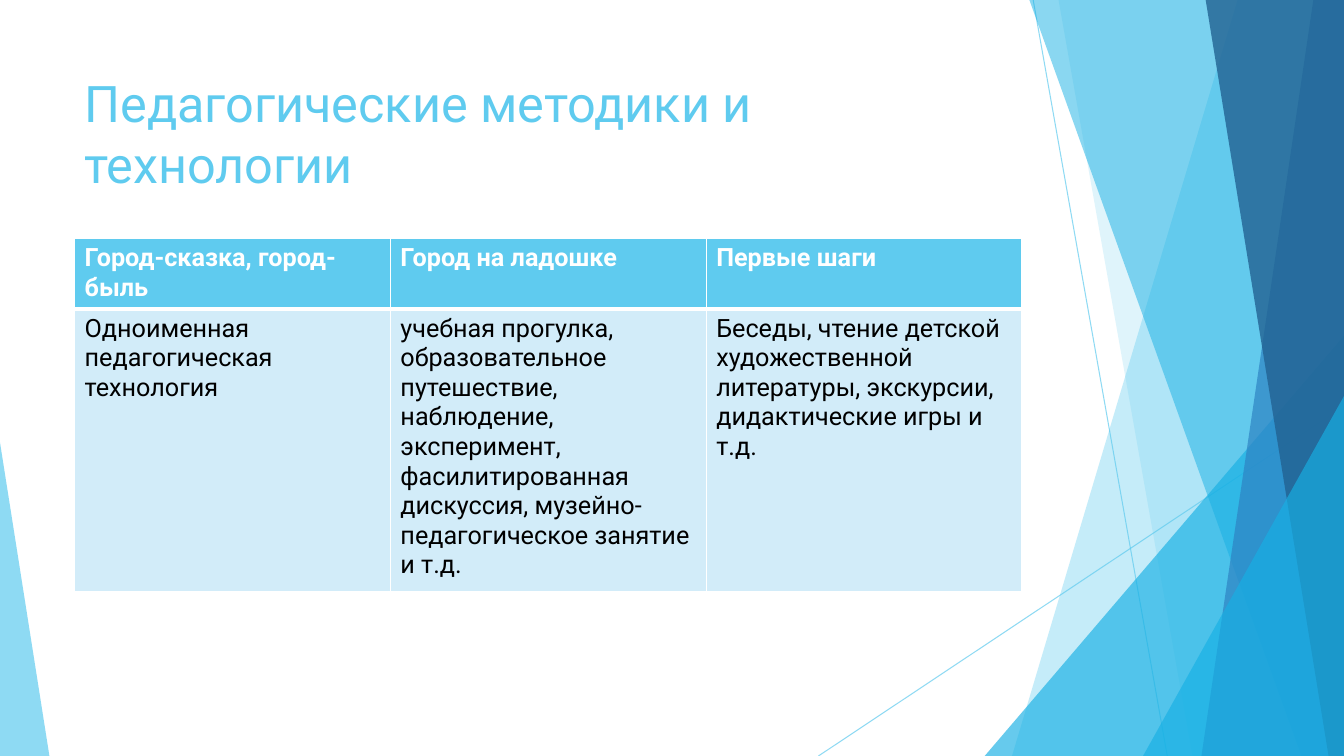
from lxml import etree
from pptx import Presentation
from pptx import util as u
from pptx.dml.color import RGBColor
from pptx.enum import shapes, text
from pptx.oxml.ns import qn

# Content
TITLE = "Педагогические методики и технологии"
METHODS = [
    ("Город-сказка, город-быль", "Одноименная педагогическая технология"),
    ("Город на ладошке",
     "учебная прогулка, образовательное путешествие, наблюдение, эксперимент, "
     "фасилитированная дискуссия, музейно-педагогическое занятие и т.д."),
    ("Первые шаги",
     "Беседы, чтение детской художественной литературы, экскурсии, "
     "дидактические игры и т.д."),
]

# Theme
THEME = {
    "font": "Roboto", "title_size": 36, "table_size": 18,
    "sky": "5FCBEF", "cyan": "17B0E4", "blue": "2E83C3", "navy": "226292",
    "pale": "D2ECF9", "white": "FFFFFF", "black": "000000",
}

# Geometry in points
WIDTH, HEIGHT, BLEED = 960, 540, 0.6
LEFT, BODY_WIDTH = 53.3, 676.8
TITLE_TOP, TITLE_HEIGHT = 48, 104
TABLE_TOP, ROW_HEIGHTS = 170.2, (48.6, 197)

# Decoration from back to front
RAYS = [((738, 0), (833.8, HEIGHT)), ((WIDTH, 290.2), (584.6, HEIGHT))]
# wing: top x, bottom x, colour, opacity; each reaches the right edge
# peak: left, top, width, apex position, colour, opacity; each stands on the bottom
FACETS = [
    ("wing", (884.2, 722.9), "sky", 36),
    ("wing", (756, 851.8), "sky", 20),
    ("peak", (703.4, 239.8, 256.6, 1), "cyan", 66),
    ("wing", (735.1, 929.5), "cyan", 50),
    ("wing", (938.2, 858.2), "blue", 70),
    ("wing", (861.1, 949), "navy", 80),
    ("peak", (816.5, 283, 143.5, 1), "cyan", 66),
    ("peak", (0, 316.1, 35.3, 0), "sky", 70),
]


def colour(name):
    return RGBColor.from_string(THEME[name])


def set_opacity(fill_parent, percent):
    for tint in fill_parent.iter(qn("a:srgbClr")):
        etree.SubElement(tint, qn("a:alpha"), val=str(percent * 1000))


def add_ray(slide, start, end):
    ray = slide.shapes.add_connector(
        shapes.MSO_CONNECTOR.STRAIGHT, *map(u.Pt, start + end))
    ray.line.color.rgb = colour("sky")
    ray.line.width = u.Pt(0.75)
    properties = ray._element.spPr
    set_opacity(properties, 70)
    etree.SubElement(properties, qn("a:effectLst"))


def add_wing(slide, top_x, bottom_x):
    corners = [(top_x, -BLEED), (WIDTH, -BLEED), (WIDTH, HEIGHT), (bottom_x, HEIGHT)]
    corners = [(u.Pt(x), u.Pt(y)) for x, y in corners]
    builder = slide.shapes.build_freeform(*corners[0])
    builder.add_line_segments(corners[1:], close=True)
    return builder.convert_to_shape()


def add_peak(slide, left, top, width, apex):
    peak = slide.shapes.add_shape(
        shapes.MSO_SHAPE.ISOSCELES_TRIANGLE,
        *map(u.Pt, (left, top, width, HEIGHT - top)))
    peak.adjustments[0] = apex
    return peak


def add_facet(slide, kind, place, tint, opacity):
    facet = {"wing": add_wing, "peak": add_peak}[kind](slide, *place)
    facet.shadow.inherit = False
    facet.fill.solid()
    facet.fill.fore_color.rgb = colour(tint)
    set_opacity(facet._element.spPr, opacity)
    facet.line.fill.background()


def write(frame, words, size, tint, bold=False):
    frame.word_wrap = True
    paragraph = frame.paragraphs[0]
    paragraph.text = words
    font = paragraph.font
    font.name, font.size, font.bold = THEME["font"], u.Pt(size), bold
    font.color.rgb = colour(tint)


def add_borders(cell, bottom_width):
    properties = cell._tc.get_or_add_tcPr()
    for side, width in (("L", 1), ("R", 1), ("T", 1), ("B", bottom_width)):
        border = etree.SubElement(properties, qn(f"a:ln{side}"), w=str(u.Pt(width)))
        fill = etree.SubElement(border, qn("a:solidFill"))
        etree.SubElement(fill, qn("a:srgbClr"), val=THEME["white"])


def add_title(slide):
    title = slide.shapes.add_textbox(
        *map(u.Pt, (LEFT, TITLE_TOP, BODY_WIDTH, TITLE_HEIGHT)))
    title.text_frame.vertical_anchor = text.MSO_ANCHOR.TOP
    write(title.text_frame, TITLE, THEME["title_size"], "sky")


def add_methods(slide):
    methods = slide.shapes.add_table(
        2, len(METHODS),
        *map(u.Pt, (LEFT, TABLE_TOP, BODY_WIDTH, sum(ROW_HEIGHTS)))).table
    for row, height in zip(methods.rows, ROW_HEIGHTS):
        row.height = u.Pt(height)
    for c, method in enumerate(METHODS):
        for r, words in enumerate(method):
            header = r == 0
            cell = methods.cell(r, c)
            add_borders(cell, 3 if header else 1)
            cell.fill.solid()
            cell.fill.fore_color.rgb = colour("sky" if header else "pale")
            write(cell.text_frame, words, THEME["table_size"],
                  "white" if header else "black", header)


def main():
    deck = Presentation()
    deck.slide_width, deck.slide_height = u.Pt(WIDTH), u.Pt(HEIGHT)
    slide = deck.slides.add_slide(deck.slide_layouts[6])
    for start, end in RAYS:
        add_ray(slide, start, end)
    for facet in FACETS:
        add_facet(slide, *facet)
    add_title(slide)
    add_methods(slide)
    deck.save("out.pptx")


if __name__ == "__main__":
    main()
